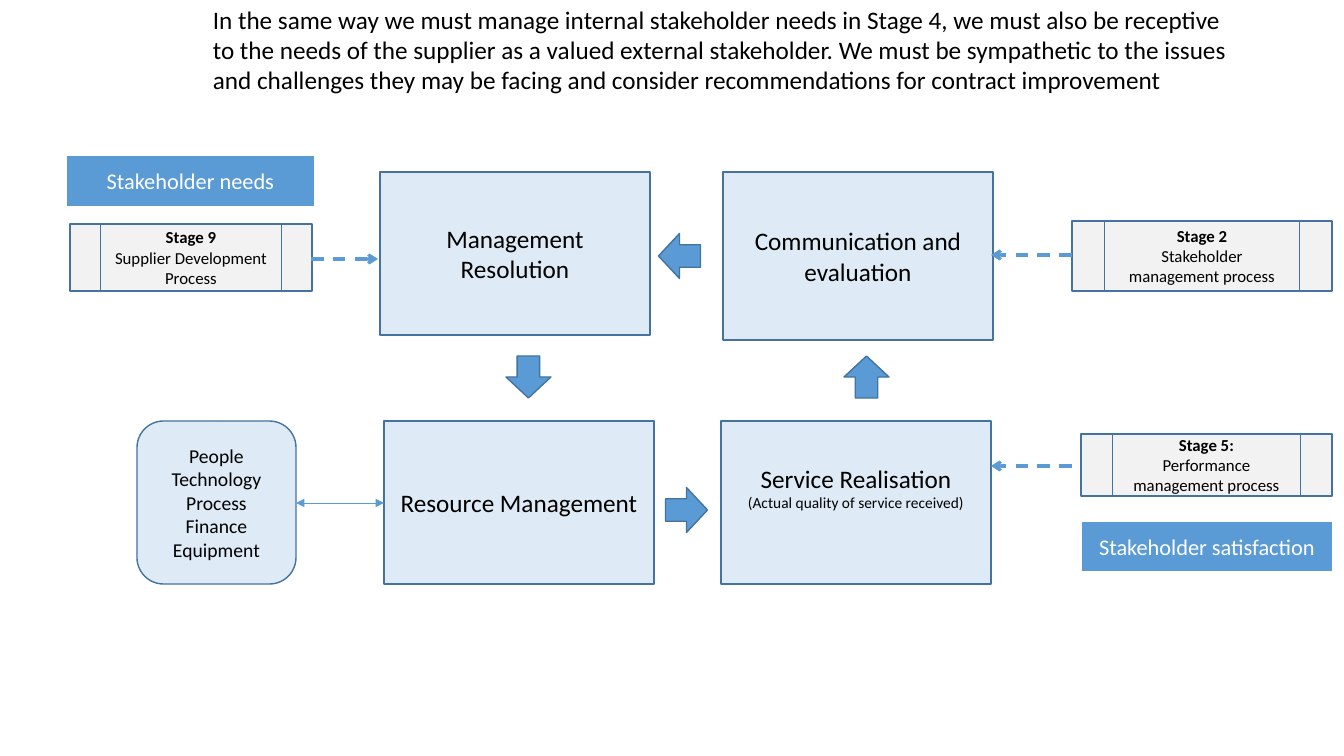
from lxml.etree import SubElement
from pptx import Presentation
from pptx.dml.color import RGBColor
from pptx.enum.dml import MSO_LINE
from pptx.enum.shapes import MSO_CONNECTOR, MSO_SHAPE
from pptx.enum.text import MSO_ANCHOR, PP_ALIGN
from pptx.oxml.ns import qn
from pptx.util import Emu, Pt

SCALE = 914400 / 100.8
BLUE, PALE, GREY, EDGE = "5B9BD5", "DEEBF7", "F2F2F2", "43739E"
BLACK, WHITE = "000000", "FFFFFF"

INTRO = (
    "In the same way we must manage internal stakeholder needs in Stage 4, "
    "we must also be receptive to the needs of the supplier as a valued "
    "external stakeholder. We must be sympathetic to the issues and challenges "
    "they may be facing and consider recommendations for contract improvement"
)
BANNERS = [
    ("Stakeholder needs", 67, 156, 247, 50),
    ("Stakeholder satisfaction", 1082, 522, 250, 49),
]
STEPS = [
    (["Management Resolution"], [18], 380, 172, 163),
    (["Resource Management"], [18], 384, 421, 163),
    (["Service Realisation", "(Actual quality of service received)"],
     [18, 11], 721, 421, 163),
    (["Communication and evaluation"], [18], 723, 172, 168),
]
ASSETS = ["People", "Technology", "Process", "Finance", "Equipment"]
STAGES = [
    ("Stage 9", "Supplier Development Process", 70, 224, 242, 67),
    ("Stage 5:", "Performance management process", 1081, 434, 251, 62),
    ("Stage 2", "Stakeholder management process", 1072, 221, 260, 70),
]
TURNS = [(657, 235, 90), (844, 356, 180), (664, 489, 270), (506, 356, 0)]
FLOWS = [(311, 378, 259), (1072, 991, 255), (1072, 991, 466)]
STEP_W = 270


def px(num):
    return Emu(round(num * SCALE))


def tint(code):
    return RGBColor.from_string(code)


def write(shape, lines, sizes=(18,), bold=(False,), color=BLACK,
          align=PP_ALIGN.CENTER, anchor=MSO_ANCHOR.MIDDLE, base=5):
    frame = shape.text_frame
    frame.word_wrap = True
    frame.vertical_anchor = anchor
    frame.margin_bottom = px(base)
    for i, line in enumerate(lines):
        para = frame.paragraphs[0] if i == 0 else frame.add_paragraph()
        para.alignment = align
        run = para.add_run()
        run.text = line
        font = run.font
        font.name = "Calibri"
        font.size = Pt(sizes[min(i, len(sizes) - 1)])
        font.bold = bold[min(i, len(bold) - 1)]
        font.color.rgb = tint(color)


def block(kind, x, y, w, h, fill, edge=EDGE):
    shape = slide.shapes.add_shape(kind, px(x), px(y), px(w), px(h))
    shape.shadow.inherit = False
    shape.fill.solid()
    shape.fill.fore_color.rgb = tint(fill)
    if edge:
        shape.line.color.rgb = tint(edge)
        shape.line.width = Pt(1)
    else:
        shape.line.fill.background()
    return shape


def link(start, end, y, width, heads, dash=None):
    line = slide.shapes.add_connector(
        MSO_CONNECTOR.STRAIGHT, px(start), px(y), px(end), px(y))
    line.line.color.rgb = tint(BLUE)
    line.line.width = Pt(width)
    if dash:
        line.line.dash_style = dash
    props = line.line._get_or_add_ln()
    for tag, kind in heads.items():
        SubElement(props, qn("a:" + tag), type=kind)
    SubElement(line._element.spPr, qn("a:effectLst"))


deck = Presentation()
deck.slide_width, deck.slide_height = px(1344), px(756)
slide = deck.slides.add_slide(deck.slide_layouts[6])

for text, *spot in BANNERS:
    shape = block(MSO_SHAPE.FLOWCHART_PROCESS, *spot, BLUE, edge=None)
    write(shape, [text], sizes=[16], color=WHITE)

for lines, sizes, x, y, h in STEPS:
    shape = block(MSO_SHAPE.FLOWCHART_PROCESS, x, y, STEP_W, h, PALE)
    write(shape, lines, sizes=sizes, base=35 if len(lines) > 1 else 5)

shape = block(MSO_SHAPE.ROUNDED_RECTANGLE, 137, 421, 159, 163, PALE)
write(shape, ASSETS, sizes=[14])

for x, y, turn in TURNS:
    shape = block(MSO_SHAPE.DOWN_ARROW, x, y, 45, 42, BLUE)
    shape.rotation = turn

for name, text, *spot in STAGES:
    shape = block(MSO_SHAPE.FLOWCHART_PREDEFINED_PROCESS, *spot, GREY)
    write(shape, [name, text], sizes=[12], bold=[True, False])

for start, end, y in FLOWS:
    link(start, end, y, 2.25, {"tailEnd": "arrow"}, MSO_LINE.DASH)
link(296, 384, 503, 0.5, {"headEnd": "triangle", "tailEnd": "triangle"})

intro = slide.shapes.add_textbox(px(203), px(-1), px(1040), px(132))
write(intro, [INTRO], align=PP_ALIGN.LEFT, anchor=MSO_ANCHOR.TOP)

deck.save("out.pptx")
